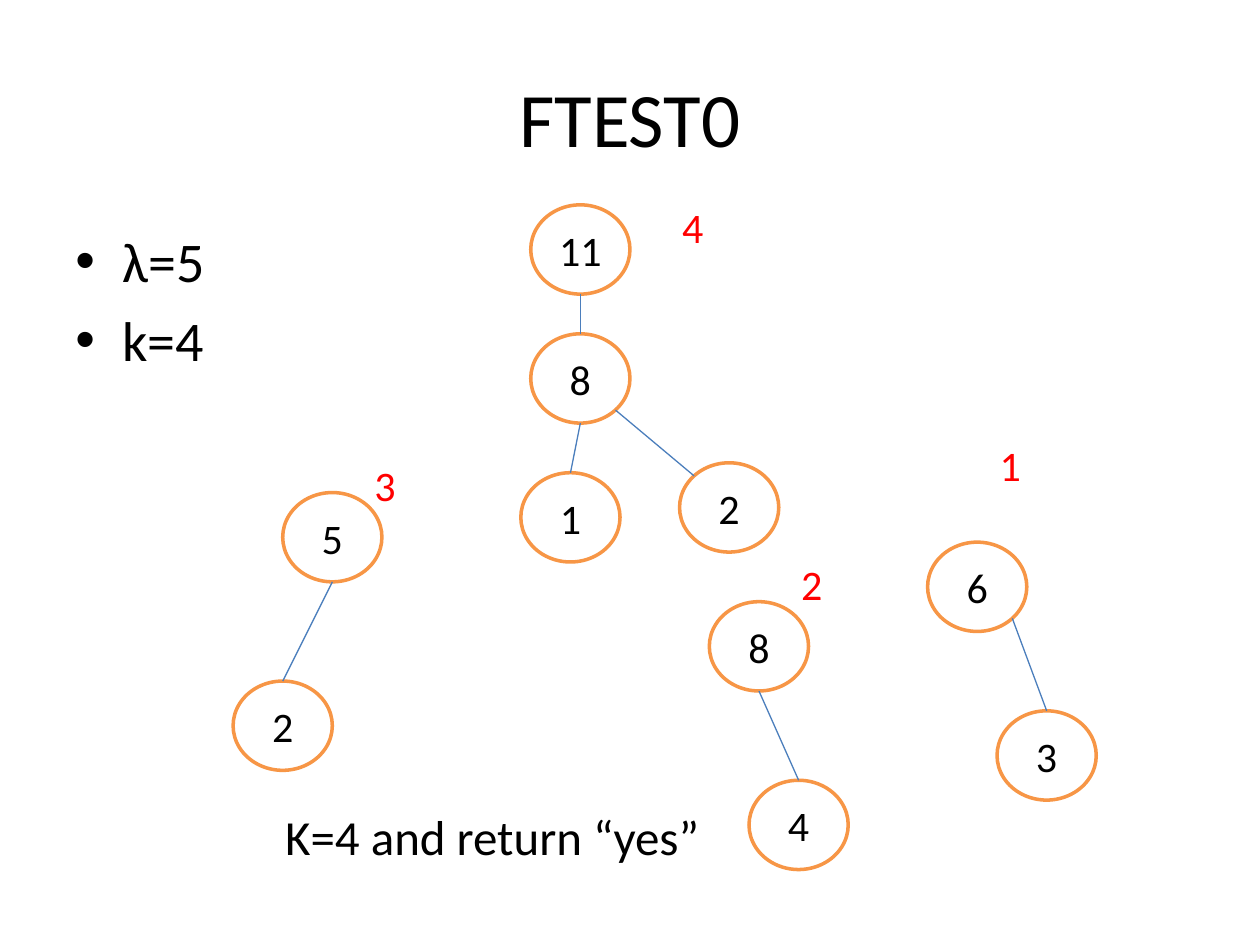
import math

import pptx
import pptx.dml.color
import pptx.enum.shapes
import pptx.enum.text
import pptx.util
from lxml import etree

Cm, Pt = pptx.util.Cm, pptx.util.Pt
ALIGN = pptx.enum.text.PP_ALIGN
ANCHOR = pptx.enum.text.MSO_ANCHOR
A = "{http://schemas.openxmlformats.org/drawingml/2006/main}"


def color(hex_string):
    return pptx.dml.color.RGBColor.from_string(hex_string)


class TreeSlide:
    FONT = "Calibri"
    BLACK, RED, WHITE = "000000", "FF0000", "FFFFFF"
    NODE_LINE, EDGE = "F79646", "4B7EBC"
    NODE_W, NODE_H = 2, 1.8

    def __init__(self, prs):
        self.s = prs.slides.add_slide(prs.slide_layouts[6])

    def run(self, p, text, size, hex_string=BLACK):
        r = p.add_run()
        r.text = text
        r.font.name = self.FONT
        r.font.size = Pt(size)
        r.font.color.rgb = color(hex_string)

    def text(self, x, y, w, h, lines, size, hex_string=BLACK,
             align=ALIGN.LEFT, anchor=ANCHOR.TOP, bullets=False):
        sp = self.s.shapes.add_textbox(Cm(x), Cm(y), Cm(w), Cm(h))
        tf = sp.text_frame
        tf.word_wrap = True
        tf.vertical_anchor = anchor
        for i, line in enumerate(lines):
            p = tf.paragraphs[0] if i == 0 else tf.add_paragraph()
            p.alignment = align
            self.run(p, line, size, hex_string)
            if bullets:
                self.bullet(p, size)

    def bullet(self, p, size):
        p.space_before = Pt(0.2 * size)
        pPr = p._p.get_or_add_pPr()
        pPr.set("marL", str(Cm(0.95)))
        pPr.set("indent", str(-Cm(0.95)))
        etree.SubElement(pPr, A + "buFont").set("typeface", "Arial")
        etree.SubElement(pPr, A + "buChar").set("char", "•")

    def node(self, x, y, value):
        sp = self.s.shapes.add_shape(
            pptx.enum.shapes.MSO_SHAPE.OVAL,
            Cm(x), Cm(y), Cm(self.NODE_W), Cm(self.NODE_H))
        sp.shadow.inherit = False
        sp.fill.solid()
        sp.fill.fore_color.rgb = color(self.WHITE)
        sp.line.color.rgb = color(self.NODE_LINE)
        sp.line.width = Pt(2)
        tf = sp.text_frame
        tf.vertical_anchor = ANCHOR.MIDDLE
        p = tf.paragraphs[0]
        p.alignment = ALIGN.CENTER
        self.run(p, value, 24)
        return sp

    def rim(self, sp, degrees):
        """Return the point on an oval's rim, clockwise from the right."""
        a = math.radians(degrees)
        return (int(sp.left + sp.width * (1 + math.cos(a)) / 2),
                int(sp.top + sp.height * (1 + math.sin(a)) / 2))

    def edge(self, parent, child, start=90, end=270):
        cxn = self.s.shapes.add_connector(
            pptx.enum.shapes.MSO_CONNECTOR.STRAIGHT,
            *self.rim(parent, start), *self.rim(child, end))
        if end == 270:
            cxn.end_connect(child, 0)
        cxn.line.color.rgb = color(self.EDGE)
        cxn.line.width = Pt(0.75)
        etree.SubElement(cxn._element.spPr, A + "effectLst")


NODES = {
    "root": (10.7, 4.13, "11"),
    "inner": (10.7, 6.73, "8"),
    "inner left": (10.5, 9.53, "1"),
    "inner right": (13.7, 9.33, "2"),
    "left": (5.7, 9.93, "5"),
    "left leaf": (4.7, 13.73, "2"),
    "middle": (14.3, 12.13, "8"),
    "middle leaf": (15.1, 15.73, "4"),
    "right": (18.7, 10.93, "6"),
    "right leaf": (20.1, 14.33, "3"),
}
EDGES = [
    ("root", "inner"),
    ("inner", "inner left"),
    ("inner", "inner right", 45, 225),
    ("left", "left leaf"),
    ("middle", "middle leaf"),
    ("right", "right leaf", 45),
]
TREE_NUMBERS = [(19.9, 8.74, "1"), (15.9, 11.13, "2"),
                (7.3, 9.13, "3"), (13.5, 3.93, "4")]


def main():
    prs = pptx.Presentation()
    prs.slide_width, prs.slide_height = Cm(25.4), Cm(19.05)
    slide = TreeSlide(prs)
    slide.text(1.27, 0.76, 22.86, 3.18, ["FTEST0"], 44,
               align=ALIGN.CENTER, anchor=ANCHOR.MIDDLE)
    slide.text(1.27, 4.45, 22.86, 12.57, ["λ=5", "k=4"], 32, bullets=True)
    nodes = {name: slide.node(*spec) for name, spec in NODES.items()}
    for parent, child, *angles in EDGES:
        slide.edge(nodes[parent], nodes[child], *angles)
    for x, y, number in TREE_NUMBERS:
        slide.text(x, y, 1, 1.27, [number], 24, slide.RED)
    slide.text(5.5, 16.13, 9, 1.45, ["K=4 and return “yes”"], 28)
    prs.save("out.pptx")


if __name__ == "__main__":
    main()
